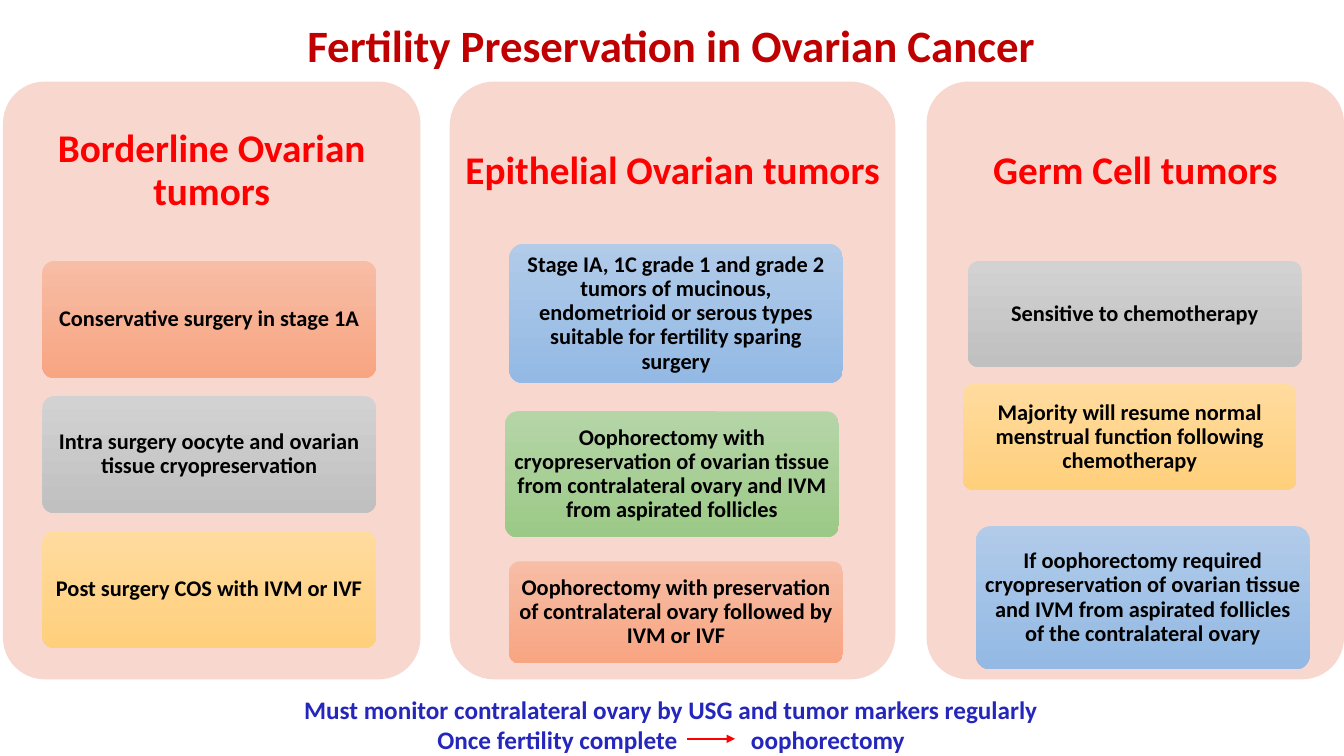
from dataclasses import dataclass

from lxml import etree
from pptx import Presentation
from pptx import util as u
from pptx.dml import color
from pptx.enum import shapes, text
from pptx.oxml import ns

EMU_PER_PX = 9144
FONT = "Calibri"
PANEL_TOP, PANEL_HEIGHT, HEADING_HEIGHT = 81, 593, 178
CARD_WIDTH = 331
COLOURS = {
    "title": "C00000",
    "heading": "FF0000",
    "panel": "F8D7CE",
    "card_text": "000000",
    "footer": "2526BC",
    "arrow": "FF0000",
}
GRADIENTS = {
    "orange": ("F7BDA5", "F8A582"),
    "grey": ("D2D2D2", "C0C0C0"),
    "yellow": ("FFDB9E", "FFD07C"),
    "blue": ("B1CBE9", "93B9E4"),
    "green": ("B5D5A7", "9CC987"),
}


@dataclass(frozen=True)
class Card:
    left: int
    top: int
    height: int
    gradient: str
    wording: str


@dataclass(frozen=True)
class Panel:
    left: int
    width: int
    heading: str
    cards: tuple[Card, ...]


PANELS = (
    Panel(3, 414, "Borderline Ovarian tumors", (
        Card(42, 259, 116, "orange", "Conservative surgery in stage 1A"),
        Card(42, 393, 116, "grey", "Intra surgery oocyte and ovarian tissue cryopreservation"),
        Card(42, 527, 116, "yellow", "Post surgery COS with IVM or IVF"),
    )),
    Panel(446, 442, "Epithelial Ovarian tumors", (
        Card(505, 242, 138, "blue",
             "Stage IA, 1C grade 1 and grade 2 tumors of mucinous, endometrioid "
             "or serous types suitable for fertility sparing surgery"),
        Card(501, 408, 125, "green",
             "Oophorectomy with cryopreservation of ovarian tissue from "
             "contralateral ovary and IVM from aspirated follicles"),
        Card(505, 557, 101, "orange",
             "Oophorectomy with preservation of contralateral ovary followed by IVM or IVF"),
    )),
    Panel(919, 414, "Germ Cell tumors", (
        Card(960, 259, 105, "grey", "Sensitive to chemotherapy"),
        Card(955, 381, 105, "yellow",
             "Majority will resume normal menstrual function following chemotherapy"),
        Card(968, 522, 142, "blue",
             "If oophorectomy required cryopreservation of ovarian tissue and IVM "
             "from aspirated follicles of the contralateral ovary"),
    )),
)


def px(length: int) -> u.Emu:
    return u.Emu(length * EMU_PER_PX)


def rgb(name: str) -> color.RGBColor:
    return color.RGBColor.from_string(COLOURS[name])


def style_paragraph(paragraph, size: int, colour: str) -> None:
    paragraph.alignment = text.PP_ALIGN.CENTER
    paragraph.font.name = FONT
    paragraph.font.size = u.Pt(size)
    paragraph.font.bold = True
    paragraph.font.color.rgb = rgb(colour)


def set_text(shape, wording: str, size: int, colour: str, inset_x: int, inset_y: int) -> None:
    frame = shape.text_frame
    frame.word_wrap = True
    frame.vertical_anchor = text.MSO_ANCHOR.MIDDLE
    frame.margin_left = frame.margin_right = px(inset_x)
    frame.margin_top = frame.margin_bottom = px(inset_y)
    paragraph = frame.paragraphs[0]
    paragraph.text = wording
    paragraph.line_spacing = 0.9
    style_paragraph(paragraph, size, colour)


def add_textbox(slide, left: int, top: int, width: int, height: int):
    return slide.shapes.add_textbox(px(left), px(top), px(width), px(height))


def add_rounded(slide, left: int, top: int, width: int, height: int):
    shape = slide.shapes.add_shape(
        shapes.MSO_SHAPE.ROUNDED_RECTANGLE, px(left), px(top), px(width), px(height))
    shape.adjustments[0] = 0.1
    shape.shadow.inherit = False
    shape.line.fill.background()
    return shape


def add_card(slide, card: Card) -> None:
    shape = add_rounded(slide, card.left, card.top, CARD_WIDTH, card.height)
    shape.fill.gradient()
    shape.fill.gradient_angle = 270
    for stop, colour in zip(shape.fill.gradient_stops, GRADIENTS[card.gradient]):
        stop.color.rgb = color.RGBColor.from_string(colour)
    set_text(shape, card.wording, 16, "card_text", 4, 3)


def add_panel(slide, panel: Panel) -> None:
    background = add_rounded(slide, panel.left, PANEL_TOP, panel.width, PANEL_HEIGHT)
    background.fill.solid()
    background.fill.fore_color.rgb = rgb("panel")
    heading = add_textbox(slide, panel.left, PANEL_TOP, panel.width, HEADING_HEIGHT)
    set_text(heading, panel.heading, 28, "heading", 12, 12)
    for card in panel.cards:
        add_card(slide, card)


def add_footer(slide) -> None:
    frame = add_textbox(slide, -2, 684, 1335, 66).text_frame
    frame.word_wrap = True
    monitoring = frame.paragraphs[0]
    monitoring.text = "Must monitor contralateral ovary by USG and tumor markers regularly"
    style_paragraph(monitoring, 18, "footer")

    completion = frame.add_paragraph()
    completion.text = "\tOnce fertility complete\toophorectomy"
    properties = completion._p.get_or_add_pPr()
    tabs = etree.SubElement(properties, ns.qn("a:tabLst"))
    for position in (426, 737):
        etree.SubElement(tabs, ns.qn("a:tab"), pos=str(px(position)), algn="l")
    style_paragraph(completion, 18, "footer")
    completion.alignment = text.PP_ALIGN.LEFT


def add_arrow(slide) -> None:
    arrow = slide.shapes.add_connector(
        shapes.MSO_CONNECTOR.STRAIGHT, px(681), px(733), px(729), px(733))
    arrow.line.color.rgb = rgb("arrow")
    arrow.line.width = u.Pt(1)
    etree.SubElement(arrow.line._get_or_add_ln(), ns.qn("a:tailEnd"), type="triangle")
    etree.SubElement(arrow._element.spPr, ns.qn("a:effectLst"))


def main() -> None:
    presentation = Presentation()
    presentation.slide_width = px(1333)
    presentation.slide_height = px(750)
    slide = presentation.slides.add_slide(presentation.slide_layouts[6])

    title = add_textbox(slide, 66, 20, 1200, 56)
    set_text(title, "Fertility Preservation in Ovarian Cancer", 32, "title", 10, 5)
    for panel in PANELS:
        add_panel(slide, panel)
    add_footer(slide)
    add_arrow(slide)
    presentation.save("out.pptx")


if __name__ == "__main__":
    main()
